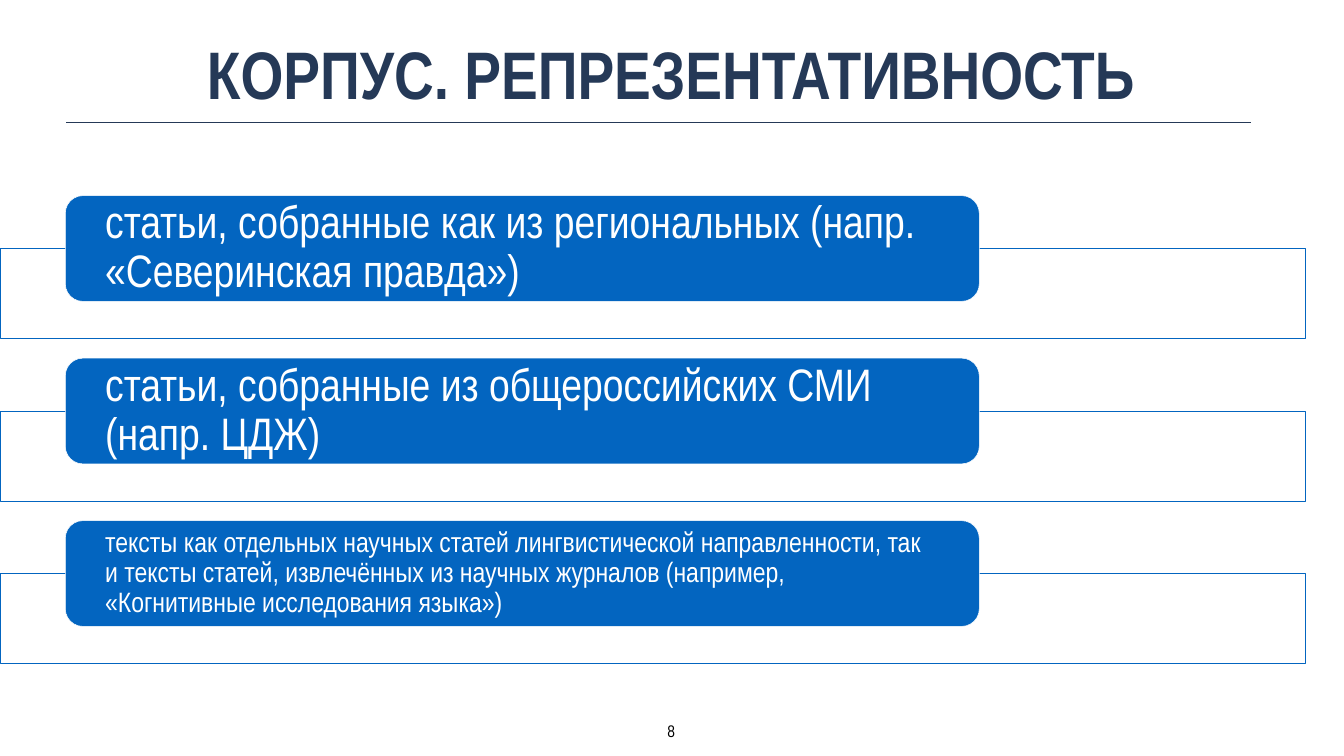
from lxml.etree import SubElement
from pptx import Presentation
from pptx.dml.color import RGBColor
from pptx.enum.shapes import MSO_CONNECTOR, MSO_SHAPE
from pptx.enum.text import MSO_ANCHOR, MSO_AUTO_SIZE, PP_ALIGN
from pptx.oxml.ns import qn
from pptx.util import Cm, Pt

NAVY = RGBColor(0x25, 0x39, 0x57)
BLUE = RGBColor(0x03, 0x65, 0xC0)
WHITE = RGBColor(0xFF, 0xFF, 0xFF)
BLACK = RGBColor(0, 0, 0)
FONT = "Arial Narrow"

TITLE = "КОРПУС. РЕПРЕЗЕНТАТИВНОСТЬ"
SOURCES = [  # text, size in points
    ("статьи, собранные как из региональных (напр. «Северинская правда»)", 65),
    ("статьи, собранные из общероссийских СМИ (напр. ЦДЖ)", 65),
    ("тексты как отдельных научных статей лингвистической направленности, "
     "так и тексты статей, извлечённых из научных журналов (например, "
     "«Когнитивные исследования языка»)", 40),
]


def write(shape, text, size, color, align, inset_x, inset_y, bold=False):
    """Fill a shape with one formatted paragraph and return it."""
    frame = shape.text_frame
    frame.margin_left = frame.margin_right = Cm(inset_x)
    frame.margin_top = frame.margin_bottom = Cm(inset_y)
    frame.text = text
    para = frame.paragraphs[0]
    para.alignment = align
    font = para.runs[0].font
    font.name, font.size, font.bold = FONT, Pt(size), bold
    font.color.rgb = color
    return para


def add_panel(page, kind, left, top, width, height, fill, line):
    shape = page.shapes.add_shape(kind, Cm(left), Cm(top), Cm(width), Cm(height))
    shape.shadow.inherit = False
    shape.fill.solid()
    shape.fill.fore_color.rgb = fill
    shape.line.color.rgb = line
    shape.line.width = Pt(0.75)
    return shape


def add_header(page, left, top, width, height):
    # Title
    box = page.shapes.add_textbox(Cm(left + 0.63), Cm(top), Cm(width), Cm(height))
    box.text_frame.word_wrap = True
    write(box, TITLE, 96, NAVY, PP_ALIGN.CENTER, 0.2, 0.2, bold=True)
    # Rule under the title
    rule_y = Cm(top + height + 1.02)
    rule = page.shapes.add_connector(
        MSO_CONNECTOR.STRAIGHT, Cm(left), rule_y, Cm(left + width), rule_y)
    rule.line.color.rgb = NAVY
    rule.line.width = Pt(1)
    SubElement(rule._element.spPr, qn("a:effectLst"))


def add_source_list(page, left, top, width, pitch):
    for index, (text, size) in enumerate(SOURCES):
        row_top = top + index * pitch
        # Outlined band behind the label
        band = add_panel(page, MSO_SHAPE.RECTANGLE, left, row_top + 2.66,
                         width, 4.55, WHITE, BLUE)
        color = band._element.spPr.find(qn("a:solidFill"))[0]
        SubElement(color, qn("a:alpha"), val="90000")
        # Rounded label, 70 % of the band width
        label = add_panel(page, MSO_SHAPE.ROUNDED_RECTANGLE, left + 0.05 * width,
                          row_top, 0.7 * width, 5.33, BLUE, WHITE)
        label.text_frame.word_wrap = True
        label.text_frame.vertical_anchor = MSO_ANCHOR.MIDDLE
        para = write(label, text, size, WHITE, PP_ALIGN.LEFT, 1.75, 0)
        para.line_spacing = 0.9


def add_page_number(page, left, top, width, height):
    box = page.shapes.add_textbox(Cm(left), Cm(top), Cm(width), Cm(height))
    box.text_frame.word_wrap = False
    box.text_frame.auto_size = MSO_AUTO_SIZE.SHAPE_TO_FIT_TEXT
    write(box, "8", 24, BLACK, PP_ALIGN.CENTER, 0.2, 0.2)


def main():
    deck = Presentation()
    deck.slide_width, deck.slide_height = Cm(67.74), Cm(38.1)
    page = deck.slides.add_slide(deck.slide_layouts[6])
    add_header(page, 3.33, 1.45, 59.74, 3.68)
    add_page_number(page, 33.15, 36.14, 1.37, 1.42)
    add_source_list(page, 0, 9.86, 65.81, 8.19)
    deck.save("out.pptx")


if __name__ == "__main__":
    main()
